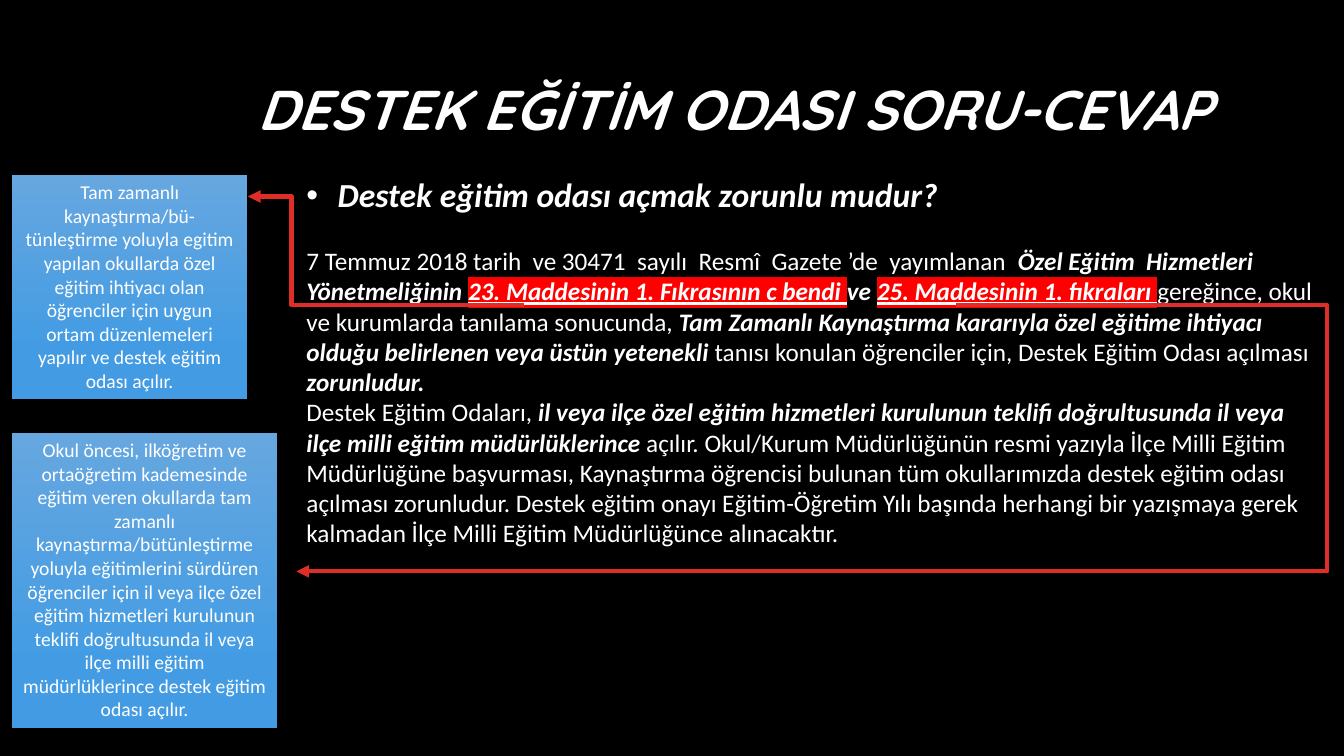
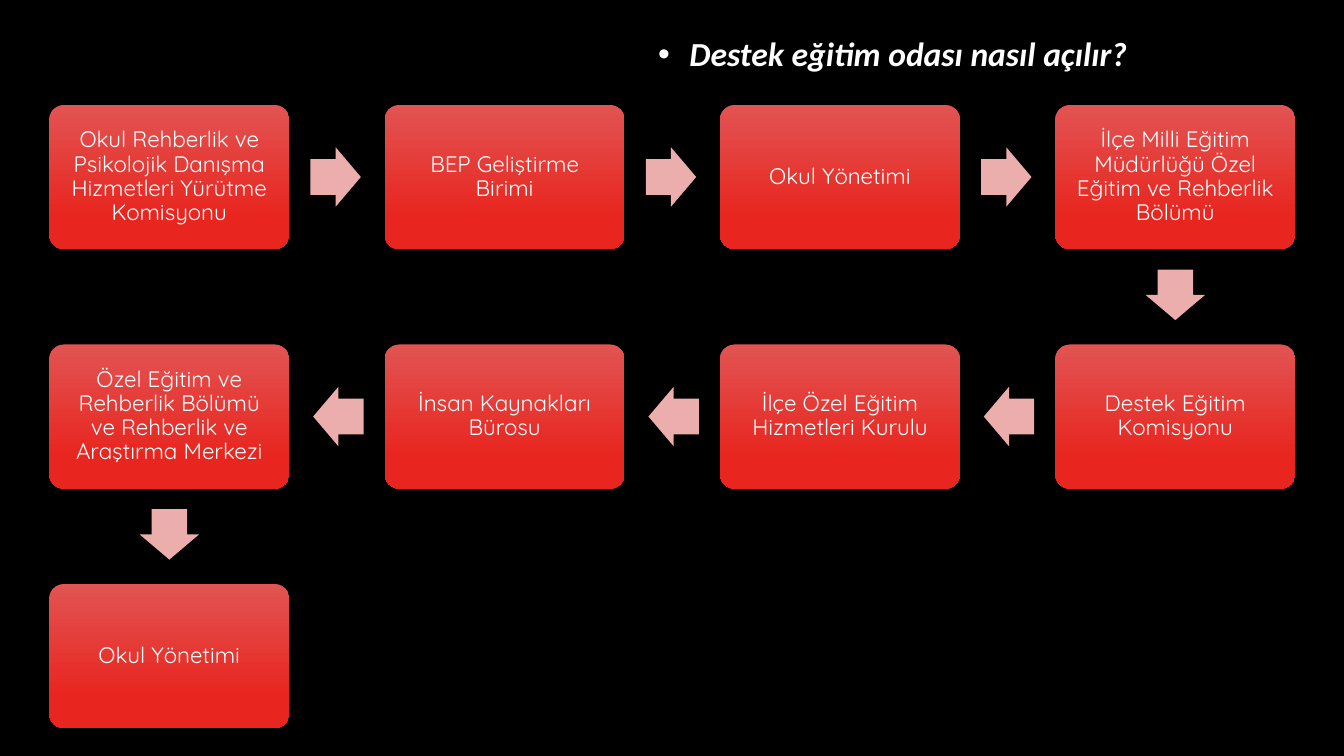
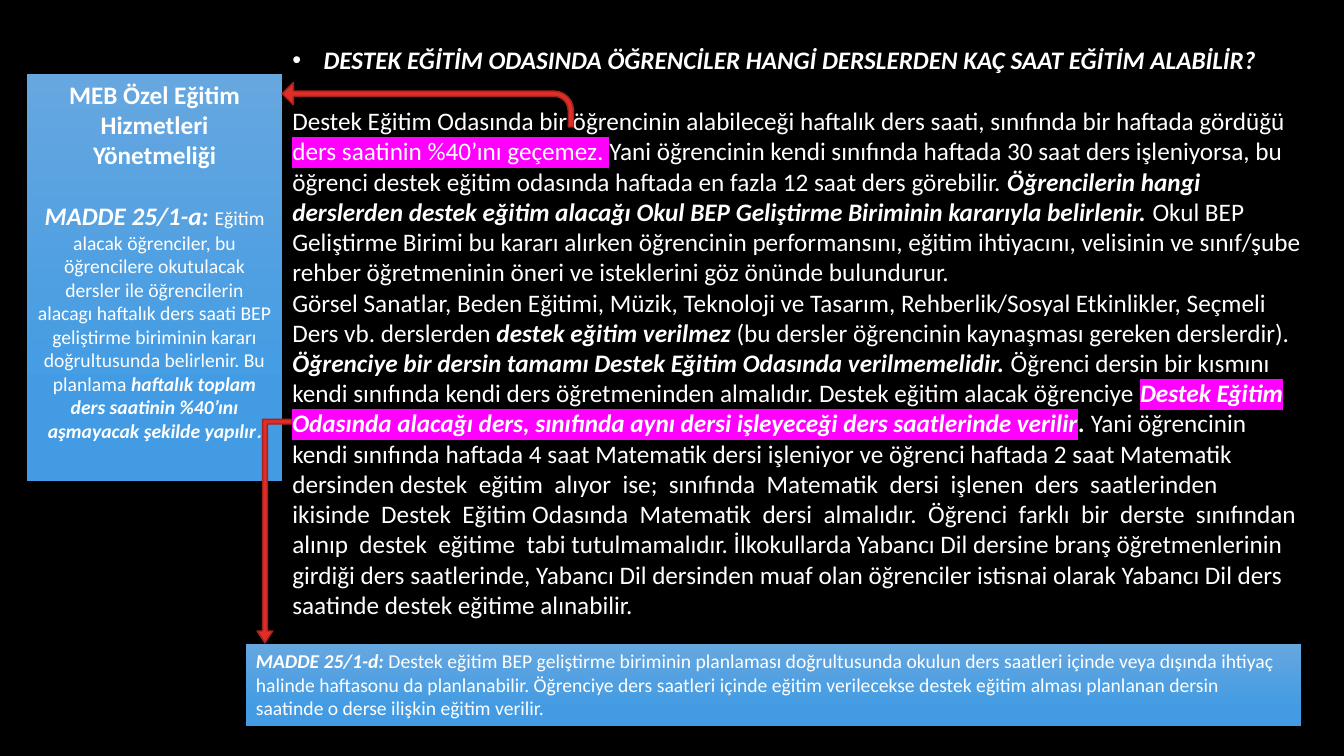
from pptx import Presentation
from pptx.dml.color import RGBColor
from pptx.enum.shapes import MSO_CONNECTOR, MSO_SHAPE
from pptx.enum.text import MSO_ANCHOR, MSO_AUTO_SIZE, PP_ALIGN
from pptx.oxml.ns import qn
from pptx.util import Inches, Pt
from lxml import etree

LEFT, MID, RIGHT = PP_ALIGN.LEFT, PP_ALIGN.CENTER, PP_ALIGN.RIGHT
TOP, CENTER = MSO_ANCHOR.TOP, MSO_ANCHOR.MIDDLE
FIXED = MSO_AUTO_SIZE.NONE
ELBOW = MSO_CONNECTOR.ELBOW
RECT, ROUND, ARROW = MSO_SHAPE.RECTANGLE, MSO_SHAPE.ROUNDED_RECTANGLE, MSO_SHAPE.RIGHT_ARROW
BENT, BENTUP = MSO_SHAPE.BENT_ARROW, MSO_SHAPE.BENT_UP_ARROW

BLACK, WHITE = "000000", "FFFFFF"
BLUES, REDS = ("66A7E0", "439CE3"), ("E25452", "E8251F")
RED, EDGE, PINK = "DF2E28", "A5221E", "ECADAD"
HEAD, BODY = "Quicksand", "Calibri"
PLAIN = {}
BOLD = {"bold": True}
STRONG = {"bold": True, "italic": True}
LAW = {**STRONG, "line": True, "mark": "FF0000"}
TAIL = {"line": True, "mark": "FF0000"}
LIMIT = {"mark": "FF00FF"}
RULE = {**STRONG, **LIMIT}


def hue(code):
    return RGBColor.from_string(code)


def write(box, paras, size=18, face=BODY, align=LEFT, anchor=TOP, lead=False,
          gap=0, space=1.0, pad=(0.1, 0.05)):
    frame = box.text_frame
    frame.word_wrap = True
    frame.auto_size = FIXED
    frame.vertical_anchor = anchor
    frame.margin_left = frame.margin_right = Inches(pad[0])
    frame.margin_top = frame.margin_bottom = Inches(pad[1])
    for n, runs in enumerate(paras):
        para = frame.add_paragraph() if n else frame.paragraphs[0]
        props = para._p.get_or_add_pPr()
        mark = lead and n == 0
        inset = Inches(0.31) if mark else 0
        props.set("marL", str(inset))
        props.set("indent", str(-inset))
        if mark:
            etree.SubElement(props, qn("a:buFont")).set("typeface", "Arial")
            etree.SubElement(props, qn("a:buChar")).set("char", "•")
        else:
            etree.SubElement(props, qn("a:buNone"))
        para.alignment = align
        para.line_spacing = space
        para.space_before = Pt(gap if n == 1 else 0)
        para.space_after = Pt(0)
        for words, form in runs:
            run = para.add_run()
            run.text = words
            font = run.font
            font.size = Pt(form.get("size", size))
            font.bold = form.get("bold", False)
            font.italic = form.get("italic", False)
            font.underline = form.get("line", False)
            font.color.rgb = hue(WHITE)
            font.name = form.get("face", face)
            if "mark" in form:
                glow = etree.Element(qn("a:highlight"))
                etree.SubElement(glow, qn("a:srgbClr")).set("val", form["mark"])
                run._r.rPr.find(qn("a:solidFill")).addnext(glow)


deck = Presentation()
deck.slide_width, deck.slide_height = Inches(13.33), Inches(7.5)
CELL = deck.slide_width / 40
back = deck.slide_master.background.fill
back.solid()
back.fore_color.rgb = hue(BLACK)

ask, flow, hours = [deck.slides.add_slide(deck.slide_layouts[n]) for n in (1, 5, 1)]
bare = hours.shapes.title.element
bare.getparent().remove(bare)

for box, area in [
    (ask.shapes.title, (2.25, 1.44, 34.11, 3.78)),
    (ask.placeholders[1], (8.82, 5.04, 30.81, 12.42)),
    (flow.shapes.title, (19.29, 0.84, 14.85, 1.5)),
    (hours.placeholders[1], (8.4, 1.17, 30.81, 17.58)),
]:
    box.left, box.top, box.width, box.height = [int(v * CELL) for v in area]

write(ask.shapes.title, [[("DESTEK EĞİTİM ODASI SORU-CEVAP", STRONG)]],
      size=40, face=HEAD, align=RIGHT, anchor=CENTER, space=0.9)
write(ask.placeholders[1], [
    [("Destek eğitim odası açmak zorunlu mudur?", {**STRONG, "size": 24})],
    [("7 Temmuz 2018 tarih  ve 30471  sayılı  Resmî  Gazete ’de  yayımlanan  ", PLAIN),
     ("Özel Eğitim  Hizmetleri  Yönetmeliğinin ", STRONG),
     ("23. Maddesinin 1. Fıkrasının c bendi ", LAW),
     ("ve ", STRONG),
     ("25. Maddesinin 1. fıkraları", LAW),
     (" ", TAIL),
     ("gereğince, okul ve kurumlarda tanılama sonucunda, ", PLAIN),
     ("Tam Zamanlı Kaynaştırma kararıyla özel eğitime ihtiyacı olduğu belirlenen "
      "veya üstün yetenekli", STRONG),
     (" tanısı konulan öğrenciler için, Destek Eğitim Odası açılması ", PLAIN),
     ("zorunludur.", STRONG)],
    [("Destek Eğitim Odaları, ", PLAIN),
     ("il veya ilçe özel eğitim hizmetleri kurulunun teklifi doğrultusunda il veya "
      "ilçe milli eğitim müdürlüklerince", STRONG),
     (" açılır. Okul/Kurum Müdürlüğünün resmi yazıyla İlçe Milli Eğitim Müdürlüğüne "
      "başvurması, Kaynaştırma öğrencisi bulunan tüm okullarımızda destek eğitim odası "
      "açılması zorunludur. Destek eğitim onayı Eğitim-Öğretim Yılı başında herhangi bir "
      "yazışmaya gerek kalmadan İlçe Milli Eğitim Müdürlüğünce alınacaktır.", PLAIN)],
], lead=True, gap=22)

write(flow.shapes.title, [[("Destek eğitim odası nasıl açılır?", STRONG)]],
      size=24, lead=True)

write(hours.placeholders[1], [
    [("DESTEK EĞİTİM ODASINDA ÖĞRENCİLER HANGİ DERSLERDEN KAÇ SAAT EĞİTİM ALABİLİR?",
      STRONG)],
    [("Destek Eğitim Odasında bir öğrencinin alabileceği haftalık ders saati, sınıfında "
      "bir haftada gördüğü ", PLAIN),
     ("ders saatinin %40’ını geçemez. ", LIMIT),
     ("Yani öğrencinin kendi sınıfında haftada 30 saat ders işleniyorsa, bu öğrenci destek "
      "eğitim odasında haftada en fazla 12 saat ders görebilir. ", PLAIN),
     ("Öğrencilerin hangi derslerden destek eğitim alacağı Okul BEP Geliştirme Biriminin "
      "kararıyla belirlenir. ", STRONG),
     ("Okul BEP Geliştirme Birimi bu kararı alırken öğrencinin performansını, eğitim "
      "ihtiyacını, velisinin ve sınıf/şube rehber öğretmeninin öneri ve isteklerini göz "
      "önünde bulundurur.", PLAIN)],
    [("Görsel Sanatlar, Beden Eğitimi, Müzik, Teknoloji ve Tasarım, Rehberlik/Sosyal "
      "Etkinlikler, Seçmeli Ders vb. derslerden ", PLAIN),
     ("destek eğitim verilmez ", STRONG),
     ("(bu dersler öğrencinin kaynaşması gereken derslerdir). ", PLAIN),
     ("Öğrenciye bir dersin tamamı Destek Eğitim Odasında verilmemelidir. ", STRONG),
     ("Öğrenci dersin bir kısmını kendi sınıfında kendi ders öğretmeninden almalıdır. "
      "Destek eğitim alacak öğrenciye ", PLAIN),
     ("Destek Eğitim Odasında alacağı ders, sınıfında aynı dersi işleyeceği ders "
      "saatlerinde verilir", RULE),
     (". ", STRONG),
     ("Yani öğrencinin kendi sınıfında haftada 4 saat Matematik dersi işleniyor ve öğrenci "
      "haftada 2 saat Matematik dersinden destek  eğitim  alıyor  ise;  sınıfında  "
      "Matematik  dersi  işlenen  ders  saatlerinden  ikisinde  Destek  Eğitim Odasında  "
      "Matematik  dersi  almalıdır.  Öğrenci  farklı  bir  derste  sınıfından  alınıp  "
      "destek  eğitime  tabi tutulmamalıdır. İlkokullarda Yabancı Dil dersine branş "
      "öğretmenlerinin girdiği ders saatlerinde, Yabancı Dil dersinden muaf olan öğrenciler "
      "istisnai olarak Yabancı Dil ders saatinde destek eğitime alınabilir.", PLAIN)],
], lead=True, gap=22)

tiles = []
for slide, area, align, paras in [
    (ask, (0.36, 5.22, 7, 6.66), MID, [[
        ("Tam zamanlı kaynaştırma/bü-tünleştirme yoluyla egitim yapılan okullarda özel "
         "eğitim ihtiyacı olan öğrenciler için uygun ortam düzenlemeleri yapılır ve destek "
         "eğitim odası açılır.", PLAIN)]]),
    (ask, (0.36, 12.9, 7.89, 8.79), MID, [[
        ("Okul öncesi, ilköğretim ve ortaöğretim kademesinde eğitim veren okullarda tam "
         "zamanlı kaynaştırma/bütünleştirme yoluyla eğitimlerini sürdüren öğrenciler için "
         "il veya ilçe özel eğitim hizmetleri kurulunun teklifi doğrultusunda il veya ilçe "
         "milli eğitim müdürlüklerince destek eğitim odası açılır.", PLAIN)]]),
    (hours, (0.8, 2.2, 7.6, 12.12), MID, [
        [("MEB Özel Eğitim Hizmetleri Yönetmeliği", {**BOLD, "size": 18})],
        [("MADDE 25/1-a: ", {**STRONG, "size": 18}),
         ("Eğitim alacak öğrenciler, bu öğrencilere okutulacak dersler ile öğrencilerin "
          "alacagı haftalık ders saati BEP geliştirme biriminin kararı doğrultusunda "
          "belirlenir. Bu planlama ", PLAIN),
         ("haftalık toplam ders saatinin %40’ını aşmayacak şekilde yapılır", STRONG),
         (".", {**STRONG, "face": HEAD})]]),
    (hours, (7.32, 19.17, 31.41, 2.43), LEFT, [[
        ("MADDE 25/1-d: ", STRONG),
        ("Destek eğitim BEP geliştirme biriminin planlaması doğrultusunda okulun ders "
         "saatleri içinde veya dışında ihtiyaç halinde haftasonu da planlanabilir. Öğrenciye "
         "ders saatleri içinde eğitim verilecekse destek eğitim alması planlanan dersin "
         "saatinde o derse ilişkin eğitim verilir.", PLAIN)]]),
]:
    panel = slide.shapes.add_shape(RECT, *[int(v * CELL) for v in area])
    write(panel, paras, size=14, align=align, gap=22)
    tiles.append((panel, BLUES))

for ends, bend in [((15.6, 9.09, 7.38, 5.85), 84200), ((28.44, 9.09, 8.82, 17.01), -56400)]:
    link = ask.shapes.add_connector(ELBOW, *[int(v * CELL) for v in ends])
    link.line.color.rgb = hue(RED)
    link.line.width = Pt(3)
    props = link._element.spPr
    guide = etree.SubElement(props.find(qn("a:prstGeom")).find(qn("a:avLst")), qn("a:gd"))
    guide.set("name", "adj1")
    guide.set("fmla", f"val {bend}")
    etree.SubElement(props.find(qn("a:ln")), qn("a:tailEnd")).set("type", "triangle")
    etree.SubElement(props, qn("a:effectLst"))

steps = [
    "Okul Rehberlik ve Psikolojik Danışma Hizmetleri Yürütme Komisyonu",
    "BEP Geliştirme Birimi",
    "Okul Yönetimi",
    "İlçe Milli Eğitim Müdürlüğü Özel Eğitim ve Rehberlik Bölümü",
    "Destek Eğitim Komisyonu",
    "İlçe Özel Eğitim Hizmetleri Kurulu",
    "İnsan Kaynakları Bürosu",
    "Özel Eğitim ve Rehberlik Bölümü ve Rehberlik ve Araştırma Merkezi",
    "Okul Yönetimi",
]
COLS, WIDE, TALL = 4, 7.14, 4.29
LONG, THICK = 1.5, 1.77
for n, name in enumerate(steps):
    row, col = divmod(n, COLS)
    way = -1 if row % 2 else 1
    if way < 0:
        col = COLS - 1 - col
    x, y = 5.04 + col * 9.98, 5.27 + row * 7.13
    area = (x - WIDE / 2, y - TALL / 2, WIDE, TALL)
    tile = flow.shapes.add_shape(ROUND, *[int(v * CELL) for v in area])
    tile.adjustments[0] = 0.1
    write(tile, [[(name, PLAIN)]], size=16, face=HEAD, align=MID, anchor=CENTER,
          space=0.9, pad=(0.11, 0.11))
    tiles.append((tile, REDS))
    if n == len(steps) - 1:
        break
    if n % COLS == COLS - 1:
        y, turn = y + 3.51, 90
    else:
        x, turn = x + way * 4.95, 90 - way * 90
    area = (x - LONG / 2, y - THICK / 2, LONG, THICK)
    arrow = flow.shapes.add_shape(ARROW, *[int(v * CELL) for v in area])
    arrow.adjustments[0], arrow.adjustments[1] = 0.6, 0.5
    arrow.rotation = turn
    arrow.shadow.inherit = False
    arrow.fill.solid()
    arrow.fill.fore_color.rgb = hue(PINK)
    arrow.line.fill.background()

for tile, tones in tiles:
    tile.shadow.inherit = False
    tile.line.fill.background()
    tile.fill.gradient()
    tile.fill.gradient_angle = 270
    for stop, tone, spot in zip(tile.fill.gradient_stops, tones, (0, 0.78)):
        stop.color.rgb = hue(tone)
        stop.position = spot

for kind, area, bends, turn, flip in [
    (BENT, (8.4, 2.46, 8.67, 1.32), (0.12, 0.25, 0.25, 0.44), 0, "1"),
    (BENTUP, (7.65, 12.48, 1.02, 6.66), (0.14, 0.23, 0.35), 180, "0"),
]:
    arrow = hours.shapes.add_shape(kind, *[int(v * CELL) for v in area])
    for n, bend in enumerate(bends):
        arrow.adjustments[n] = bend
    arrow.rotation = turn
    arrow._element.spPr.find(qn("a:xfrm")).set("flipH", flip)
    arrow.shadow.inherit = False
    arrow.fill.solid()
    arrow.fill.fore_color.rgb = hue(RED)
    arrow.line.color.rgb = hue(EDGE)
    arrow.line.width = Pt(1)

deck.save("out.pptx")
